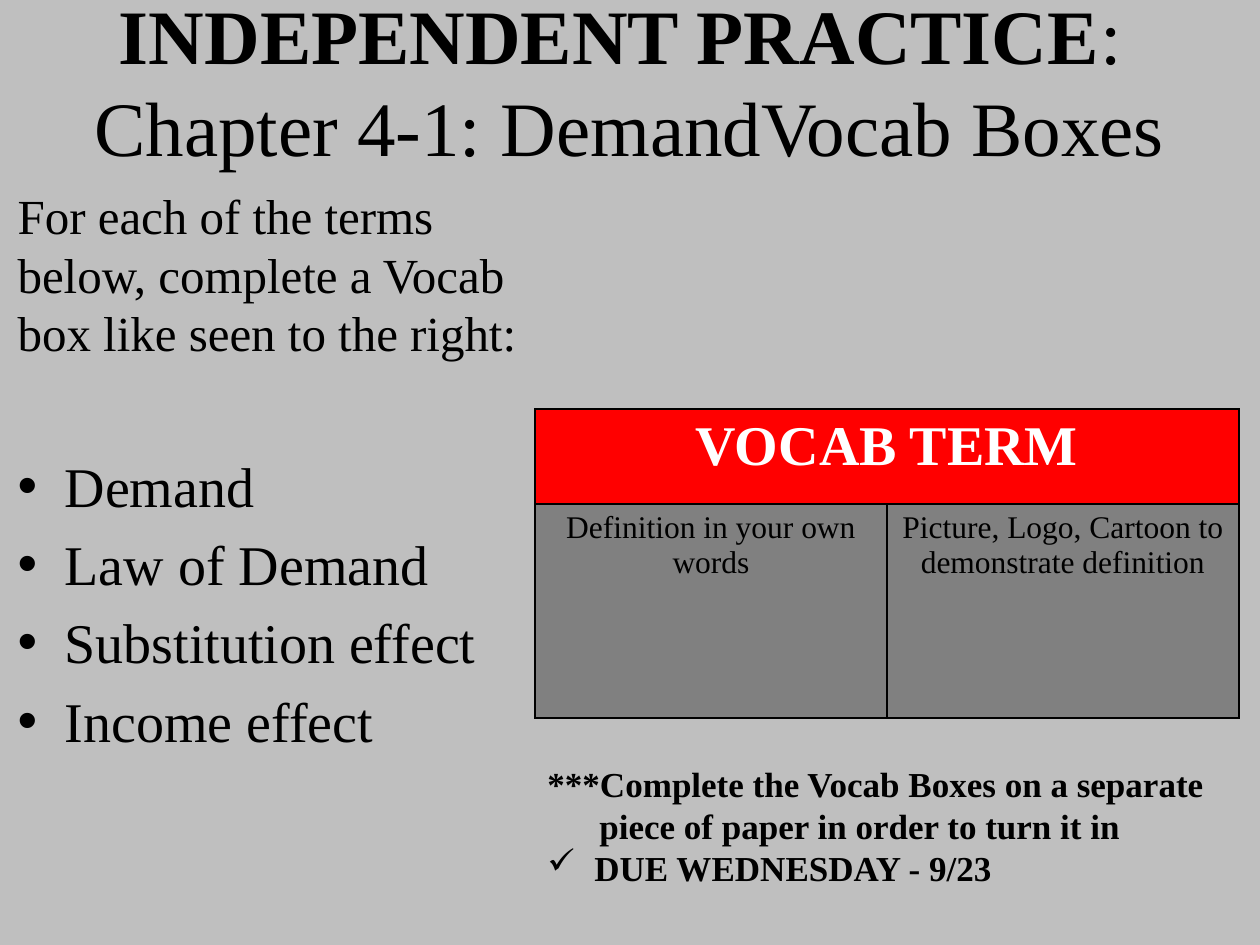
from lxml.etree import SubElement
from pptx import Presentation
from pptx.dml.color import RGBColor as RGB
from pptx.enum.text import MSO_ANCHOR as Anchor, MSO_AUTO_SIZE as Fit, PP_ALIGN as Align
from pptx.oxml.ns import qn
from pptx.util import Emu, Pt

PX = 914400 // 126
FONT = "Times New Roman"
INK = {"back": "BFBFBF", "text": "000000", "head": "FF0000",
       "cell": "808080", "white": "FFFFFF"}


def write(para, text, size, bold=False, color="text", align=Align.LEFT,
          before=0, left=0, hang=0, mark=None):
    """Add a run to a paragraph and set the paragraph's layout."""
    run = para.add_run()
    run.text = text
    font = run.font
    font.name, font.size, font.bold = FONT, Pt(size), bold
    font.color.rgb = RGB.from_string(INK[color])
    para.alignment, para.space_before = align, Pt(before)
    props = para._p.get_or_add_pPr()
    props.set("marL", str(left * PX))
    props.set("indent", str(-hang * PX))
    for old in props.findall(qn("a:buNone")) + props.findall(qn("a:buChar")):
        props.remove(old)
    if mark:
        SubElement(props, qn("a:buChar"), char=mark)
    else:
        SubElement(props, qn("a:buNone"))


def place(shape, *box):
    shape.left, shape.top, shape.width, shape.height = [Emu(n * PX) for n in box]


deck = Presentation()
deck.slide_width, deck.slide_height = Emu(1260 * PX), Emu(945 * PX)
slide = deck.slides.add_slide(deck.slide_layouts[1])
slide.background.fill.solid()
slide.background.fill.fore_color.rgb = RGB.from_string(INK["back"])

# Title
title = slide.shapes.title
place(title, 0, 1, 1260, 158)
frame = title.text_frame
frame.auto_size, frame.vertical_anchor = Fit.NONE, Anchor.MIDDLE
para = frame.paragraphs[0]
write(para, "INDEPENDENT PRACTICE", 44, bold=True, align=Align.CENTER)
write(para, ": ", 44, align=Align.CENTER)
para.add_line_break()
write(para, "Chapter 4-1: DemandVocab Boxes", 44, align=Align.CENTER)

# Terms
body = slide.placeholders[1]
place(body, 5, 179, 525, 567)
frame = body.text_frame
frame.auto_size = Fit.NONE
write(frame.paragraphs[0], "For each of the terms below, complete a Vocab "
      "box like seen to the right:", 28, before=5.6)
terms = ["Demand", "Law of Demand", "Substitution effect", "Income effect"]
for i, term in enumerate(terms):
    write(frame.add_paragraph(), term, 32, before=6.4 if i else 51,
          left=47, hang=47, mark="•")

# Vocab box
box = slide.shapes.add_table(2, 2, *[Emu(n * PX) for n in (535, 409, 704, 309)])
table = box.table
for row, high in zip(table.rows, (95, 214)):
    row.height = Emu(high * PX)
table.cell(0, 0).merge(table.cell(0, 1))
cells = [
    (0, 0, "VOCAB TERM", "head", dict(size=32, bold=True, color="white")),
    (0, 1, "", "head", None),
    (1, 0, "Definition in your own words", "cell", dict(size=18)),
    (1, 1, "Picture, Logo, Cartoon to demonstrate definition", "cell", dict(size=18)),
]
for row, col, text, fill, look in cells:
    cell = table.cell(row, col)
    props = cell._tc.get_or_add_tcPr()
    for side in ("lnL", "lnR", "lnT", "lnB"):
        line = SubElement(props, qn(f"a:{side}"), w=str(Pt(1)))
        paint = SubElement(line, qn("a:solidFill"))
        SubElement(paint, qn("a:srgbClr"), val=INK["text"])
    cell.fill.solid()
    cell.fill.fore_color.rgb = RGB.from_string(INK[fill])
    if text:
        write(cell.text_frame.paragraphs[0], text, align=Align.CENTER, **look)

# Due note
note = slide.shapes.add_textbox(*[Emu(n * PX) for n in (535, 756, 703, 140)])
frame = note.text_frame
frame.word_wrap, frame.auto_size = True, Fit.SHAPE_TO_FIT_TEXT
write(frame.paragraphs[0], "***Complete the Vocab Boxes on a separate", 20, bold=True)
write(frame.add_paragraph(), "piece of paper in order to turn it in", 20,
      bold=True, left=52)
write(frame.add_paragraph(), "DUE WEDNESDAY - 9/23", 20, bold=True,
      left=47, hang=47, mark="✓")

deck.save("out.pptx")
